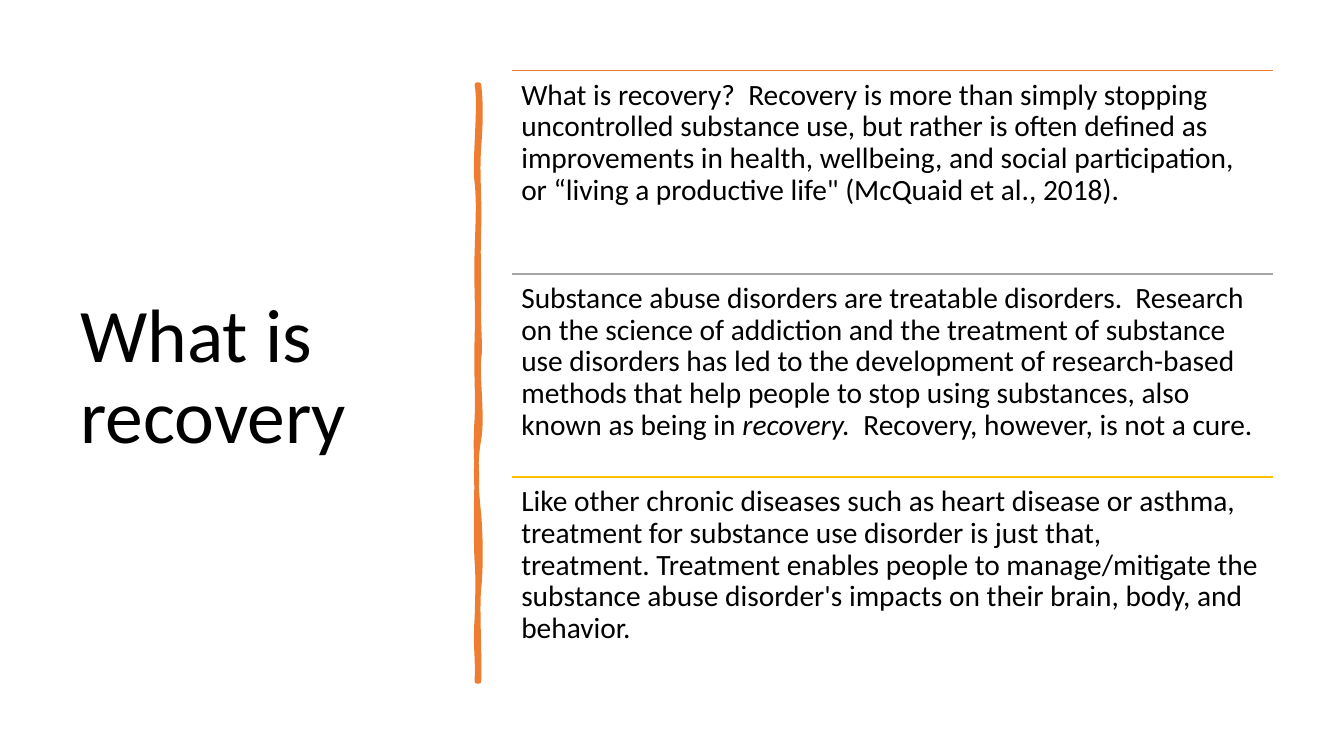
from dataclasses import dataclass

from lxml import etree
from pptx import Presentation
from pptx.dml.color import RGBColor
from pptx.enum.shapes import MSO_CONNECTOR
from pptx.enum.text import MSO_ANCHOR
from pptx.oxml.ns import qn
from pptx.util import Inches, Pt

STRAIGHT = MSO_CONNECTOR.STRAIGHT
MIDDLE = MSO_ANCHOR.MIDDLE
TOP = MSO_ANCHOR.TOP


@dataclass(frozen=True)
class Theme:
    font: str = "Calibri"
    ink: str = "000000"
    orange: str = "ED7D31"
    grey: str = "A5A5A5"
    gold: str = "FFC000"
    title_size: int = 54
    body_size: int = 21


THEME = Theme()
HARD_SPACE = chr(160)

PANEL_LEFT, PANEL_TOP = 5.08, 0.7
PANEL_WIDTH, PANEL_HEIGHT = 7.55, 6.05

SECTIONS = [
    (THEME.orange, [
        (f"What is recovery?{HARD_SPACE} Recovery is more than simply stopping uncontrolled "
         "substance use, but rather is often defined as improvements in health, wellbeing, and "
         "social participation, or “living a productive life\" (McQuaid et al., 2018).", False),
    ]),
    (THEME.grey, [
        (f"Substance abuse disorders are treatable disorders. {HARD_SPACE}Research on the "
         "science of addiction and the treatment of substance use disorders has led to the "
         "development of research-based methods that help people to stop using substances, "
         "also known as being in ", False),
        (f"recovery.{HARD_SPACE} ", True),
        (f"Recovery, however, is not a cure.{HARD_SPACE}", False),
    ]),
    (THEME.gold, [
        ("Like other chronic diseases such as heart disease or asthma, treatment for substance "
         f"use disorder is just that, treatment.{HARD_SPACE}Treatment enables people to "
         "manage/mitigate the substance abuse disorder's impacts on their brain, body, and "
         "behavior.", False),
    ]),
]

BRUSH_START = (4.75, 0.84)
BRUSH_CURVES = [
    ((4.77, 1.02), (4.77, 1.19), (4.75, 1.46)),
    ((4.73, 1.73), (4.76, 1.95), (4.75, 2.26)),
    ((4.74, 2.57), (4.75, 2.62), (4.75, 2.94)),
    ((4.74, 3.25), (4.77, 3.42), (4.75, 3.56)),
    ((4.73, 3.7), (4.79, 4.14), (4.75, 4.36)),
    ((4.71, 4.57), (4.72, 4.84), (4.75, 5.1)),
    ((4.77, 5.36), (4.77, 5.64), (4.75, 5.84)),
    ((4.73, 6.03), (4.76, 6.5), (4.75, 6.76)),
    ((4.74, 6.76), (4.73, 6.76), (4.73, 6.76)),
    ((4.74, 6.46), (4.71, 6.44), (4.73, 6.13)),
    ((4.74, 5.83), (4.74, 5.7), (4.73, 5.57)),
    ((4.72, 5.44), (4.72, 4.95), (4.73, 4.77)),
    ((4.73, 4.59), (4.71, 4.45), (4.73, 4.15)),
    ((4.74, 3.86), (4.72, 3.73), (4.73, 3.35)),
    ((4.74, 2.98), (4.72, 2.81), (4.73, 2.5)),
    ((4.74, 2.18), (4.75, 2), (4.73, 1.81)),
    ((4.7, 1.63), (4.77, 1.04), (4.73, 0.84)),
]


def color(value):
    return RGBColor.from_string(value)


def bend_segments(shape):
    segments = list(shape._element.iter(qn("a:lnTo")))
    for start in range(0, len(BRUSH_CURVES) * 3, 3):
        trio = segments[start:start + 3]
        curve = etree.Element(qn("a:cubicBezTo"))
        trio[0].addprevious(curve)
        for segment in trio:
            curve.append(segment[0])
            segment.getparent().remove(segment)


def add_brush_stroke(page):
    left, top = BRUSH_START
    builder = page.shapes.build_freeform(Inches(left), Inches(top))
    points = [(Inches(x), Inches(y)) for curve in BRUSH_CURVES for x, y in curve]
    builder.add_line_segments(points, close=True)
    stroke = builder.convert_to_shape()
    bend_segments(stroke)
    stroke.shadow.inherit = False
    stroke.fill.solid()
    stroke.fill.fore_color.rgb = color(THEME.orange)
    stroke.line.color.rgb = color(THEME.orange)
    stroke.line.width = Pt(3.25)
    etree.SubElement(stroke.line._get_or_add_ln(), qn("a:round"))


def add_rule(page, top, rule_color):
    rule = page.shapes.add_connector(
        STRAIGHT, Inches(PANEL_LEFT), Inches(top),
        Inches(PANEL_LEFT + PANEL_WIDTH), Inches(top))
    rule.line.color.rgb = color(rule_color)
    rule.line.width = Pt(1)
    etree.SubElement(rule._element.spPr, qn("a:effectLst"))


def add_text(page, left, top, width, height, spans, size, inset, anchor):
    box = page.shapes.add_textbox(Inches(left), Inches(top), Inches(width), Inches(height))
    frame = box.text_frame
    frame.word_wrap = True
    frame.vertical_anchor = anchor
    frame.margin_left = frame.margin_right = Inches(inset)
    frame.margin_top = frame.margin_bottom = Inches(0.09)
    para = frame.paragraphs[0]
    para.line_spacing = 0.9
    para.font.name = THEME.font
    para.font.size = Pt(size)
    para.font.color.rgb = color(THEME.ink)
    for text, italic in spans:
        span = para.add_run()
        span.text = text
        if italic:
            span.font.italic = True


def main():
    deck = Presentation()
    deck.slide_width, deck.slide_height = Inches(13.33), Inches(7.5)
    page = deck.slides.add_slide(deck.slide_layouts[6])

    add_text(page, 0.7, 0.7, 3.74, 6.11, [("What is recovery", False)],
             THEME.title_size, 0.1, MIDDLE)
    add_brush_stroke(page)
    section_height = PANEL_HEIGHT / len(SECTIONS)
    for index, (rule_color, spans) in enumerate(SECTIONS):
        top = PANEL_TOP + index * section_height
        add_rule(page, top, rule_color)
        add_text(page, PANEL_LEFT, top, PANEL_WIDTH, section_height, spans,
                 THEME.body_size, 0.09, TOP)

    deck.save("out.pptx")


if __name__ == "__main__":
    main()
